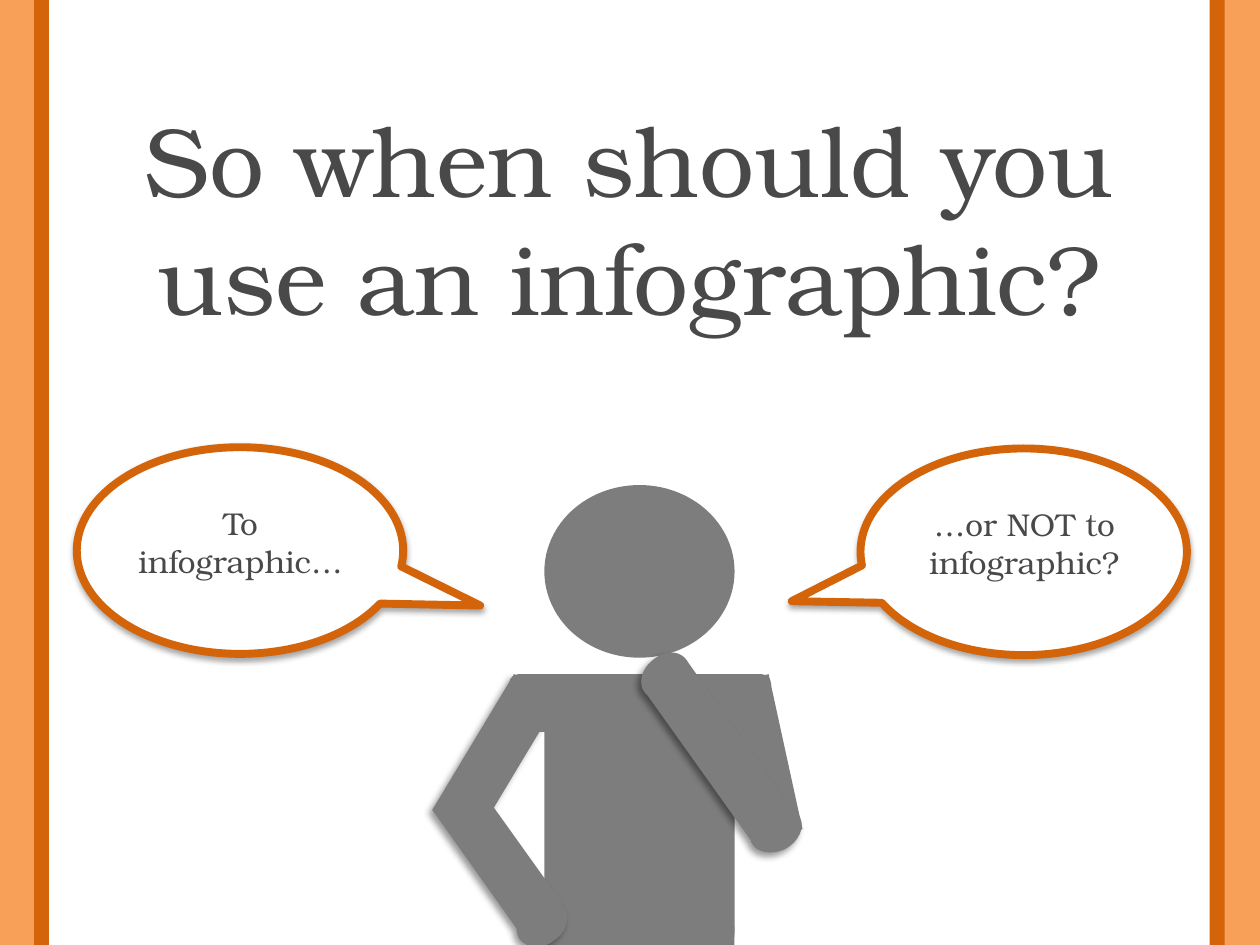
from lxml import etree
from pptx import Presentation
from pptx.dml.color import RGBColor
from pptx.enum.shapes import MSO_SHAPE
from pptx.enum.text import MSO_ANCHOR, MSO_AUTO_SIZE, PP_ALIGN
from pptx.oxml.ns import qn
from pptx.util import Inches, Pt

RECT = MSO_SHAPE.RECTANGLE
ROUNDED = MSO_SHAPE.ROUNDED_RECTANGLE
OVAL = MSO_SHAPE.OVAL
CALLOUT = MSO_SHAPE.OVAL_CALLOUT
TOP = MSO_ANCHOR.TOP
FIT_SHAPE = MSO_AUTO_SIZE.SHAPE_TO_FIT_TEXT
CENTER = PP_ALIGN.CENTER

FONT = "TeX Gyre Bonum"
WHITE, ORANGE, PEACH = "FFFFFF", "D36409", "F8A058"
GRAY, INK = "7D7D7D", "494949"
color = RGBColor.from_string


def paint(shape, fill, line=None, width=0, shadow=None):
    shape.shadow.inherit = False
    shape.fill.solid()
    shape.fill.fore_color.rgb = color(fill)
    if line:
        shape.line.color.rgb = color(line)
        shape.line.width = Pt(width)
    else:
        shape.line.fill.background()
    if shadow:
        opacity, blur, distance, angle = shadow
        effects = shape.element.spPr.find(qn("a:effectLst"))
        outer = etree.SubElement(effects, qn("a:outerShdw"), blurRad=str(Pt(blur)),
                                 dist=str(Pt(distance)), dir=str(angle * 60000),
                                 algn="ctr", rotWithShape="0")
        black = etree.SubElement(outer, qn("a:srgbClr"), val="000000")
        etree.SubElement(black, qn("a:alpha"), val=str(opacity * 1000))


def write(box, text, size):
    frame = box.text_frame
    frame.word_wrap = True
    frame.auto_size = FIT_SHAPE
    frame.vertical_anchor = TOP
    para = frame.paragraphs[0]
    para.alignment = CENTER
    span = para.add_run()
    span.text = text
    span.font.name = FONT
    span.font.size = Pt(size)
    span.font.color.rgb = color(INK)


deck = Presentation()
deck.slide_width, deck.slide_height = Inches(10), Inches(7.5)
page = deck.slides.add_slide(deck.slide_layouts[5])
page.background.fill.solid()
page.background.fill.fore_color.rgb = color(PEACH)

title = page.shapes.title
title.left, title.top = Inches(0.83), Inches(0.74)
title.width, title.height = Inches(8.33), Inches(1.99)
write(title, "So when should you use an infographic?", 56)

panel = page.shapes.add_shape(ROUNDED, Inches(0.33), Inches(-2.17), Inches(9.33), Inches(11.67))
paint(panel, WHITE, ORANGE, 8.5)
title.element.addprevious(panel.element)

bubbles = [
    (6.83, 3.56, -0.711, 0.239, "…or NOT to infographic?"),
    (0.61, 3.55, 0.736, 0.266, "To infographic…"),
]
for left, top, tail_x, tail_y, words in bubbles:
    group = page.shapes.add_group_shape()
    bubble = group.shapes.add_shape(CALLOUT, Inches(left), Inches(top), Inches(2.59), Inches(1.64))
    bubble.adjustments[0], bubble.adjustments[1] = tail_x, tail_y
    paint(bubble, WHITE, ORANGE, 4.5, (35, 3.15, 1.8, 90))
    label = group.shapes.add_textbox(Inches(left + 0.3), Inches(top + 0.4), Inches(2), Inches(0.71))
    write(label, words, 18)

hip_arm = [
    (4.08, 5.35), (4.43, 5.56), (3.92, 6.41), (4.47, 7.18), (4.45, 7.19),
    (4.46, 7.2, 4.47, 7.2, 4.48, 7.21), (4.53, 7.29, 4.49, 7.41, 4.39, 7.47),
    (4.3, 7.54, 4.18, 7.53, 4.12, 7.45), (4.11, 7.43, 4.1, 7.4, 4.1, 7.37),
    (3.44, 6.44), (3.43, 6.43),
]
chin_arm = [
    (5.33, 5.18), (5.38, 5.18, 5.42, 5.2, 5.45, 5.24), (5.47, 5.27), (6.29, 6.43),
    (6.32, 6.44, 6.34, 6.46, 6.35, 6.49), (6.39, 6.57, 6.34, 6.68, 6.23, 6.74),
    (6.12, 6.79, 6, 6.77, 5.96, 6.68), (5.96, 6.67), (5.14, 5.52),
    (5.13, 5.51, 5.13, 5.51, 5.12, 5.5), (5.06, 5.43, 5.09, 5.31, 5.18, 5.24),
    (5.23, 5.2, 5.28, 5.18, 5.33, 5.18),
]
figure_parts = [
    (OVAL, 4.32, 3.85, 1.51, 1.37, 0),
    (ROUNDED, 4.32, 5.37, 1.51, 2.28, 0),
    (RECT, 4.32, 7.35, 0.57, 2.38, 0),
    (RECT, 5.26, 7.35, 0.57, 2.38, 0),
    (RECT, 5.83, 5.38, 0.41, 1.26, 347.7),
    hip_arm,
    (ROUNDED, 4.04, 5.35, 2.08, 0.46, 0),
    chin_arm,
]
STEPS = 8
thinker = page.shapes.add_group_shape()
for part in figure_parts:
    if isinstance(part, tuple):
        kind, left, top, width, height, turn = part
        limb = thinker.shapes.add_shape(kind, Inches(left), Inches(top), Inches(width), Inches(height))
        limb.rotation = turn
        paint(limb, GRAY)
        continue
    outline = [part[0]]
    for step in part[1:]:
        if len(step) == 2:
            outline.append(step)
            continue
        x0, y0 = outline[-1]
        x1, y1, x2, y2, x3, y3 = step
        for index in range(1, STEPS + 1):
            t = index / STEPS
            a, b, c, d = (1 - t) ** 3, 3 * t * (1 - t) ** 2, 3 * t * t * (1 - t), t ** 3
            outline.append((a * x0 + b * x1 + c * x2 + d * x3, a * y0 + b * y1 + c * y2 + d * y3))
    points = [(Inches(x), Inches(y)) for x, y in outline]
    builder = thinker.shapes.build_freeform(*points[0])
    builder.add_line_segments(points[1:], close=True)
    paint(builder.convert_to_shape(), GRAY, shadow=(40, 4, 3, 135))

deck.save("out.pptx")
